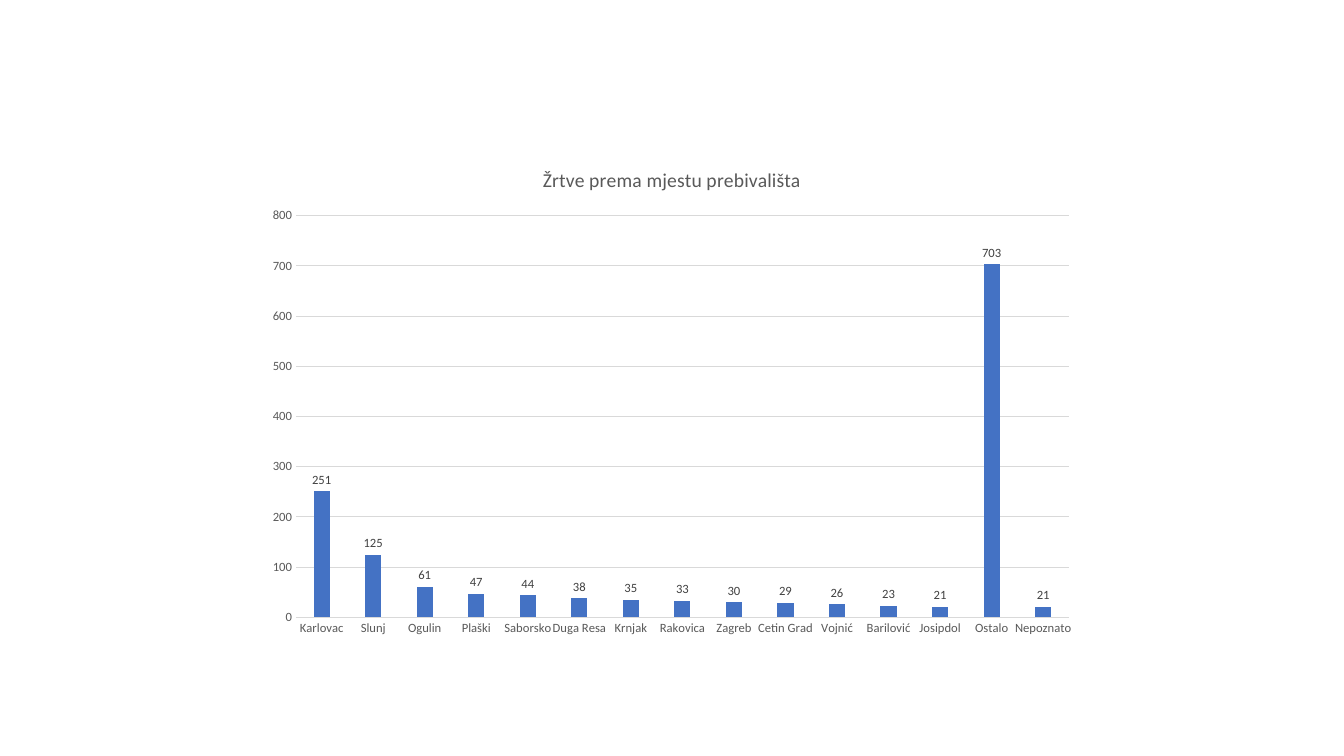
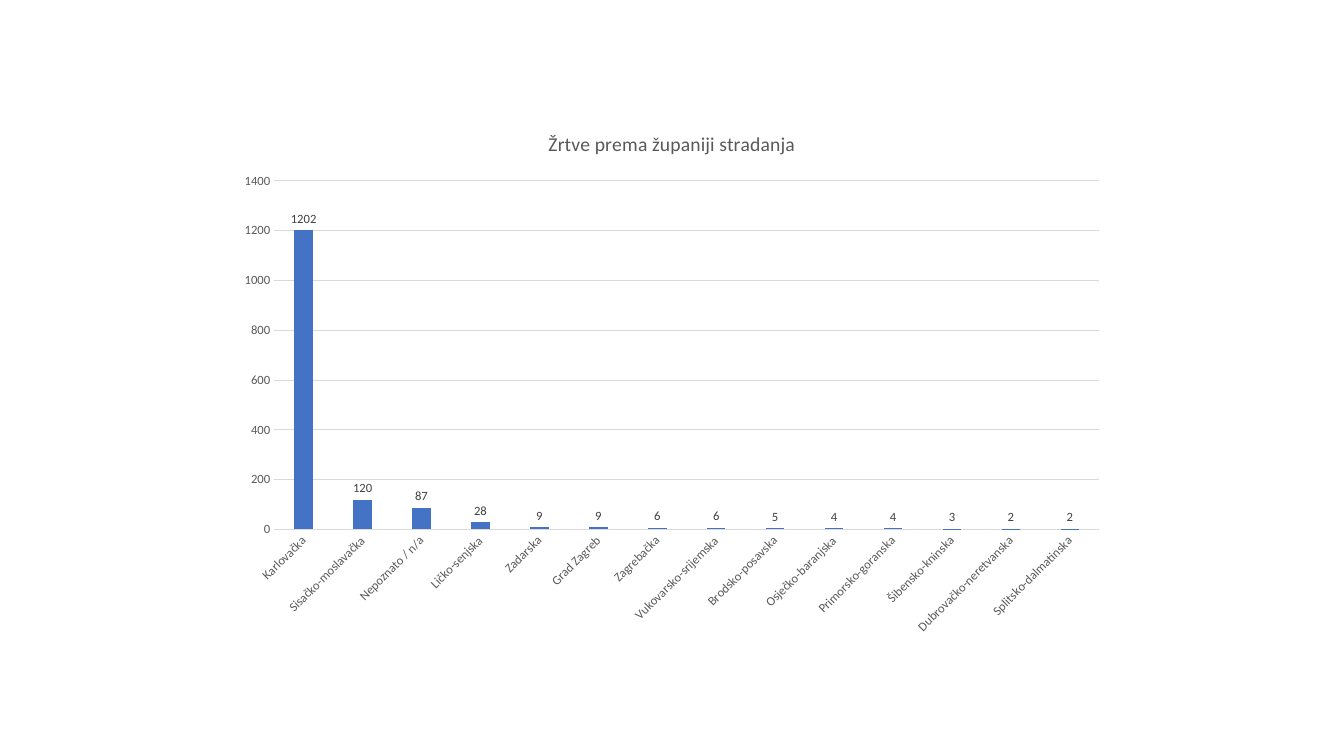
from dataclasses import dataclass

from pptx import Presentation
from pptx.chart.data import CategoryChartData
from pptx.dml.color import RGBColor
from pptx.enum.chart import XL_CHART_TYPE, XL_LABEL_POSITION, XL_TICK_MARK
from pptx.util import Inches, Pt

# Content: one chart per slide, box is left, top, width, height in inches
CHARTS = [
    {
        "title": "Žrtve prema mjestu prebivališta",
        "box": (2.54, 1.46, 8.25, 4.95),
        "scale": {"minimum_scale": 0, "maximum_scale": 800, "major_unit": 100},
        "victims": {
            "Karlovac": 251, "Slunj": 125, "Ogulin": 61, "Plaški": 47,
            "Saborsko": 44, "Duga Resa": 38, "Krnjak": 35, "Rakovica": 33,
            "Zagreb": 30, "Cetin Grad": 29, "Vojnić": 26, "Barilović": 23,
            "Josipdol": 21, "Ostalo": 703, "Nepoznato": 21,
        },
    },
    {
        "title": "Žrtve prema županiji stradanja",
        "box": (2.25, 1.1, 8.83, 5.3),
        "scale": {"minimum_scale": 0, "maximum_scale": 1400, "major_unit": 200},
        "victims": {
            "Karlovačka": 1202, "Sisačko-moslavačka": 120,
            "Nepoznato / n/a": 87, "Ličko-senjska": 28, "Zadarska": 9,
            "Grad Zagreb": 9, "Zagrebačka": 6, "Vukovarsko-srijemska": 6,
            "Brodsko-posavska": 5, "Osječko-baranjska": 4,
            "Primorsko-goranska": 4, "Šibensko-kninska": 3,
            "Dubrovačko-neretvanska": 2, "Splitsko-dalmatinska": 2,
        },
    },
]


# Shared look
@dataclass(frozen=True)
class Theme:
    font: str = "Calibri"
    bar: RGBColor = RGBColor(0x44, 0x72, 0xC4)
    muted: RGBColor = RGBColor(0x59, 0x59, 0x59)
    value: RGBColor = RGBColor(0x40, 0x40, 0x40)
    grid: RGBColor = RGBColor(0xD9, 0xD9, 0xD9)
    title_size: Pt = Pt(14)
    base_size: Pt = Pt(10)
    label_size: Pt = Pt(9)
    grid_width: Pt = Pt(0.75)


THEME = Theme()
AUTO_ROTATION = "-60000000"
AXIS_FORMAT = {
    "major_tick_mark": XL_TICK_MARK.NONE,
    "minor_tick_mark": XL_TICK_MARK.NONE,
}
BAR_FORMAT = {"gap_width": 219, "overlap": -27, "vary_by_categories": False,
              "has_data_labels": True}
LABEL_FORMAT = {"show_value": True, "position": XL_LABEL_POSITION.OUTSIDE_END}


def apply(target, values):
    for name, value in values.items():
        setattr(target, name, value)


def style_font(font, size, color):
    apply(font, {"name": THEME.font, "size": size, "bold": False})
    font.color.rgb = color


def style_line(line):
    line.color.rgb = THEME.grid
    line.width = THEME.grid_width


def add_title(chart, text):
    chart.has_title = True
    chart.chart_title.include_in_layout = False
    paragraph = chart.chart_title.text_frame.paragraphs[0]
    heading = paragraph.add_run()
    heading.text = text
    style_font(heading.font, THEME.title_size, THEME.muted)


def style_axes(chart, scale):
    places, counts = chart.category_axis, chart.value_axis
    for axis in (places, counts):
        apply(axis, AXIS_FORMAT)
        style_font(axis.tick_labels.font, THEME.label_size, THEME.muted)
    # Let long category names tilt when they do not fit
    places.tick_labels.font  # creates the text properties
    body = places._element.txPr.bodyPr
    body.set("rot", AUTO_ROTATION)
    body.set("vert", "horz")
    style_line(places.format.line)
    apply(counts, scale)
    counts.format.line.fill.background()
    counts.has_major_gridlines = True
    style_line(counts.major_gridlines.format.line)


def style_bars(plot):
    apply(plot, BAR_FORMAT)
    apply(plot.data_labels, LABEL_FORMAT)
    style_font(plot.data_labels.font, THEME.label_size, THEME.value)
    fill = plot.series[0].format.fill
    fill.solid()
    fill.fore_color.rgb = THEME.bar


def add_victim_chart(slide, content):
    data = CategoryChartData()
    data.categories = list(content["victims"])
    data.add_series("Series 1", list(content["victims"].values()))
    box = [Inches(length) for length in content["box"]]
    chart = slide.shapes.add_chart(
        XL_CHART_TYPE.COLUMN_CLUSTERED, *box, data).chart
    style_font(chart.font, THEME.base_size, RGBColor(0, 0, 0))
    chart.has_legend = False
    add_title(chart, content["title"])
    style_axes(chart, content["scale"])
    style_bars(chart.plots[0])


def main():
    deck = Presentation()
    deck.slide_width, deck.slide_height = Inches(13.33), Inches(7.5)
    blank = deck.slide_layouts[6]
    for content in CHARTS:
        add_victim_chart(deck.slides.add_slide(blank), content)
    deck.save("out.pptx")


if __name__ == "__main__":
    main()
